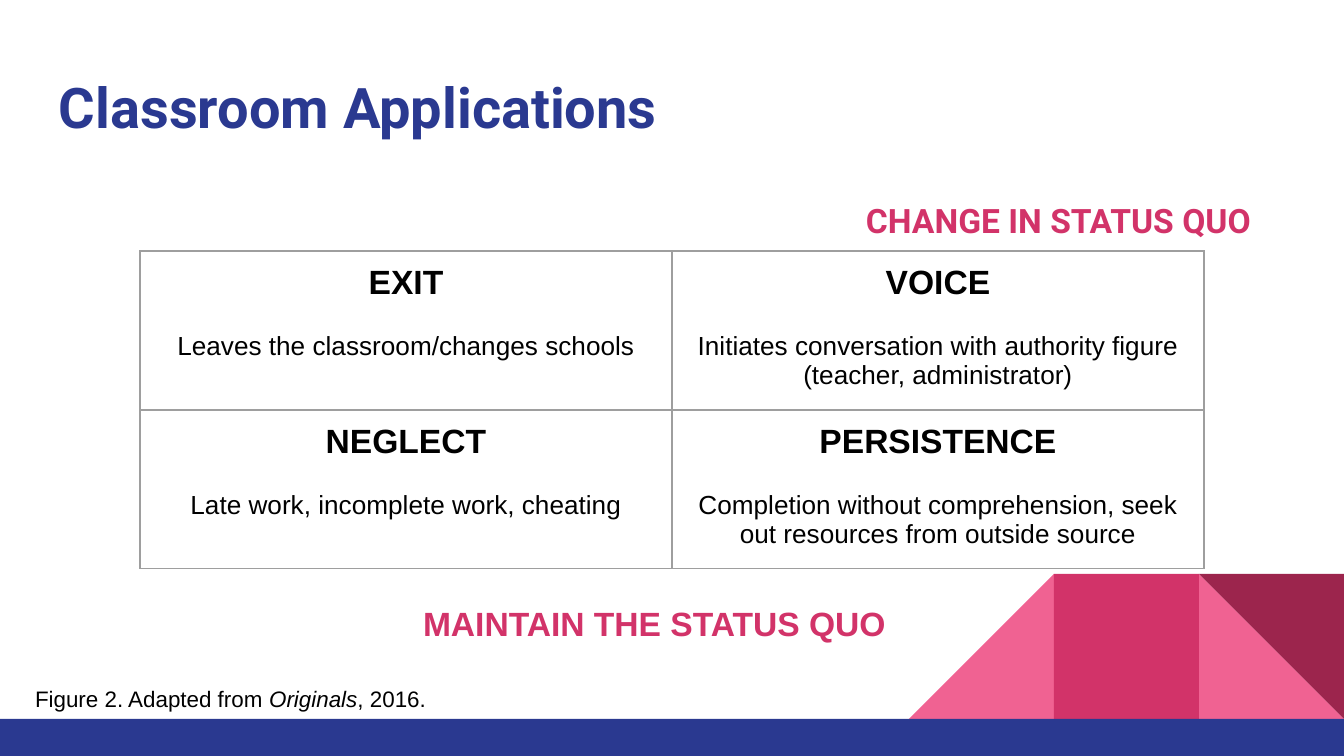
from lxml.etree import SubElement
from pptx import Presentation
from pptx.dml.color import RGBColor
from pptx.enum.shapes import MSO_SHAPE as Shape
from pptx.enum.text import PP_ALIGN as Align
from pptx.oxml.ns import qn
from pptx.util import Emu, Pt

EMU_PER_PX = 914400 / 134.4
WIDTH, HEIGHT = 1344, 756
INSET = 13
COLORS = {
    "navy": "2A3990",
    "crimson": "D23369",
    "pink": "F06292",
    "maroon": "9C254D",
    "black": "000000",
    "grid": "9E9E9E",
}


def px(length):
    return Emu(round(length * EMU_PER_PX))


def color(name):
    return RGBColor.from_string(COLORS[name])


class Deck:
    def __init__(self):
        self.presentation = Presentation()
        self.presentation.slide_width = px(WIDTH)
        self.presentation.slide_height = px(HEIGHT)
        self.slide = self.presentation.slides.add_slide(self.presentation.slide_layouts[6])

    def style(self, paragraph, size, ink="black", bold=False, font="Arial"):
        paragraph.font.name = font
        paragraph.font.size = Pt(size)
        paragraph.font.bold = bold
        paragraph.font.color.rgb = color(ink)

    def block(self, kind, box, fill, flip=False, rotation=0):
        block = self.slide.shapes.add_shape(kind, *map(px, box))
        block.shadow.inherit = False
        block.fill.solid()
        block.fill.fore_color.rgb = color(fill)
        block.line.fill.background()
        block.rotation = rotation
        if flip:
            block._element.spPr.xfrm.set("flipH", "1")

    def text(self, box, runs, size, **look):
        """Each run is a (wording, italic) pair; returns the paragraph."""
        frame = self.slide.shapes.add_textbox(*map(px, box)).text_frame
        frame.word_wrap = True
        frame.margin_left = frame.margin_right = px(INSET)
        frame.margin_top = frame.margin_bottom = px(INSET)
        paragraph = frame.paragraphs[0]
        self.style(paragraph, size, **look)
        for wording, italic in runs:
            run = paragraph.add_run()
            run.text = wording
            if italic:
                run.font.italic = True
        return paragraph

    def cell(self, cell, heading, example):
        cell.margin_left = cell.margin_right = px(INSET)
        cell.margin_top = cell.margin_bottom = px(INSET)
        title = cell.text_frame.paragraphs[0]
        detail = cell.text_frame.add_paragraph()
        title.text, detail.text = heading, example
        title.alignment = detail.alignment = Align.CENTER
        title.space_after = Pt(16)
        self.style(title, 18, bold=True)
        self.style(detail, 14)

        # Borders come before the fill in the cell properties
        properties = cell._tc.get_or_add_tcPr()
        for side in ("a:lnL", "a:lnR", "a:lnT", "a:lnB"):
            line = SubElement(properties, qn(side), w=str(Pt(0.75)))
            paint = SubElement(line, qn("a:solidFill"))
            SubElement(paint, qn("a:srgbClr"), val=COLORS["grid"])
        cell.fill.background()

    def matrix(self, left, top, column_width, row_heights, contents):
        columns = len(contents[0])
        table = self.slide.shapes.add_table(
            len(contents), columns, px(left), px(top),
            px(column_width * columns), px(sum(row_heights))).table
        table.first_row = table.horz_banding = False
        for column in table.columns:
            column.width = px(column_width)
        for row, height, entries in zip(table.rows, row_heights, contents):
            row.height = px(height)
            for cell, (heading, example) in zip(row.cells, entries):
                self.cell(cell, heading, example)


def main():
    deck = Deck()

    # Corner decoration: three tiles standing on the footer band
    tile, footer_top = 145, 719
    tile_top = footer_top - tile
    slope_left, center, slope_right = (WIDTH - tile * n for n in (3, 2, 1))
    for kind, left, fill, flip, rotation in (
        (Shape.RIGHT_TRIANGLE, slope_right, "pink", False, 0),
        (Shape.RIGHT_TRIANGLE, slope_left, "pink", True, 0),
        (Shape.RECTANGLE, center, "crimson", False, 0),
        (Shape.RIGHT_TRIANGLE, slope_right, "maroon", False, 180),
    ):
        deck.block(kind, (left, tile_top, tile, tile), fill, flip, rotation)
    deck.block(Shape.RECTANGLE, (0, footer_top, WIDTH, HEIGHT - footer_top), "navy")

    # Title
    deck.text((46, 60, 1253, 89), [("Classroom Applications", False)], 30,
              ink="navy", bold=True, font="Roboto")

    # Upper label, indented to the right half
    change = deck.text((46, 181, 1253, 491), [("CHANGE IN STATUS QUO", False)], 18,
                       ink="crimson", bold=True, font="Roboto")
    change.line_spacing = 1.15
    change._p.get_or_add_pPr().set("marL", str(px(807)))

    # Four responses
    deck.matrix(140, 251, 532, (157, 153), (
        (("EXIT", "Leaves the classroom/changes schools"),
         ("VOICE", "Initiates conversation with authority figure (teacher, administrator)")),
        (("NEGLECT", "Late work, incomplete work, cheating"),
         ("PERSISTENCE",
          "Completion without comprehension, seek out resources from outside source")),
    ))

    # Lower label and source note
    deck.text((410, 590, 504, 44), [("MAINTAIN THE STATUS QUO", False)], 18,
              ink="crimson", bold=True)
    deck.text((22, 672, 542, 35), [("Figure 2. Adapted from ", False),
                                   ("Originals", True), (", 2016.", False)], 12)

    deck.presentation.save("out.pptx")


if __name__ == "__main__":
    main()
